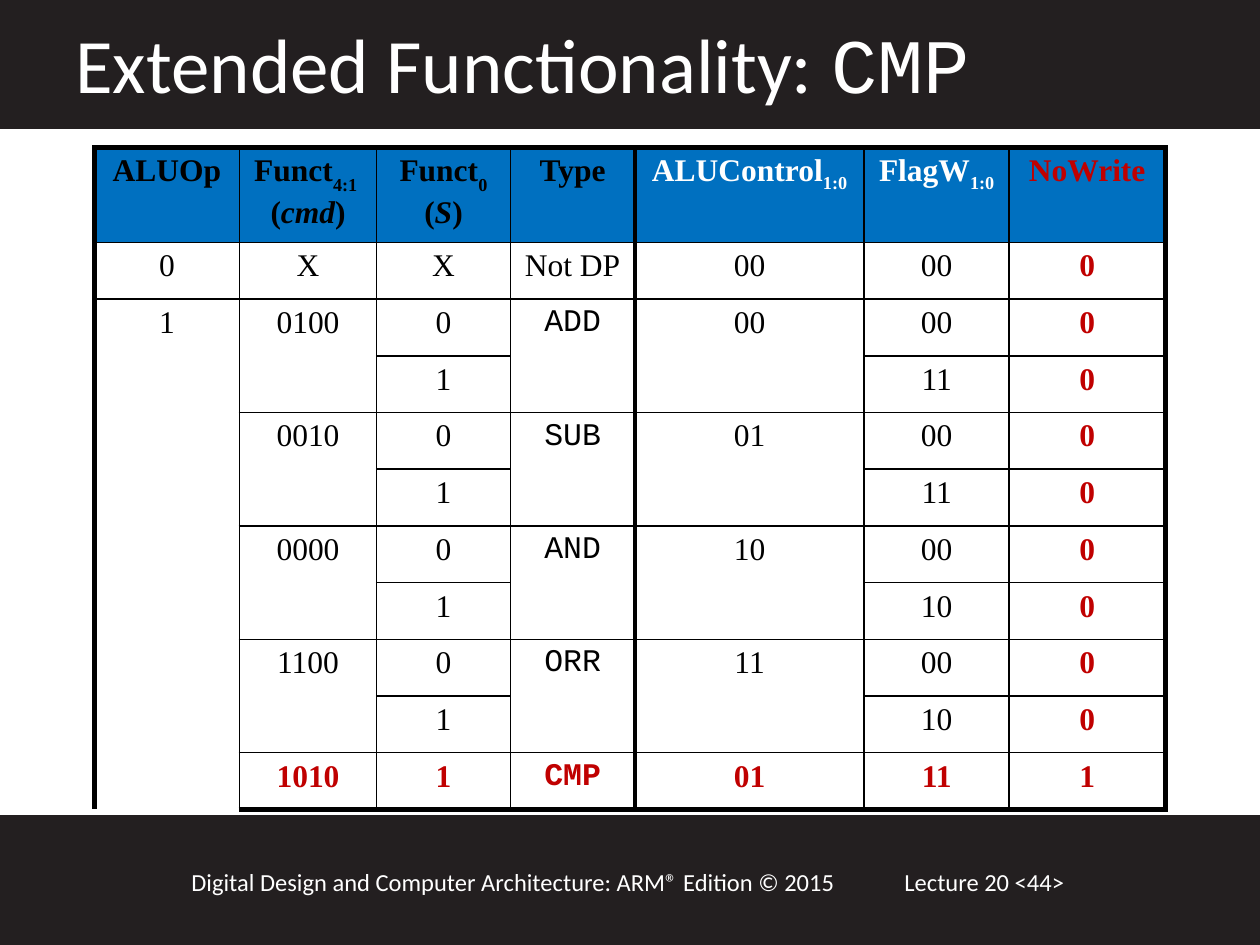
import pptx
import pptx.dml.color
import pptx.enum.shapes
import pptx.enum.text
import pptx.oxml
import pptx.oxml.ns
import pptx.util

SLIDE_WIDTH = pptx.util.Inches(10)
SLIDE_HEIGHT = pptx.util.Inches(7.5)

THEME = {
    "band": "231F20", "header": "0070C0", "light": "FFFFFF",
    "ink": "000000", "accent": "C00000",
    "sans": "Calibri", "serif": "Times New Roman", "mono": "Courier New",
    "title": 44, "footer": 14, "cell": 18,
    "thin": 1, "thick": 3,
}
PLAIN_TABLE_STYLE = "{2D5ABB26-0587-4C30-8999-92F81FD0307C}"

# Column widths and row heights in percent of the slide
COLUMN_SHARES = [11.5, 10.9, 10.6, 9.9, 18.2, 11.5, 12.4]
HEADER_SHARE, ROW_SHARE = 10, 6
TYPE_COLUMN, NO_WRITE_COLUMN = 3, 6

SUB = {"baseline": -30}
HIGH_SUB = {"baseline": -25}
ITALIC = {"italic": True}
# Each heading: colour, then paragraphs of (text, format) runs
HEADINGS = [
    ("ink", [[("ALUOp", {})]]),
    ("ink", [[("Funct", {}), ("4:1 ", SUB)], [("(", {}), ("cmd", ITALIC), (")", {})]]),
    ("ink", [[("Funct", {}), ("0", SUB)], [("(", {}), ("S", ITALIC), (")", {})]]),
    ("ink", [[("Type", {})]]),
    ("light", [[("ALUControl", {}), ("1:0", HIGH_SUB)]]),
    ("light", [[("FlagW", {}), ("1:0", HIGH_SUB)]]),
    ("accent", [[("NoWrite", {})]]),
]
# None continues the cell above
DECODER_ROWS = [
    ["0", "X", "X", "Not DP", "00", "00", "0"],
    ["1", "0100", "0", "ADD", "00", "00", "0"],
    [None, None, "1", None, None, "11", "0"],
    [None, "0010", "0", "SUB", "01", "00", "0"],
    [None, None, "1", None, None, "11", "0"],
    [None, "0000", "0", "AND", "10", "00", "0"],
    [None, None, "1", None, None, "10", "0"],
    [None, "1100", "0", "ORR", "11", "00", "0"],
    [None, None, "1", None, None, "10", "0"],
    [None, "1010", "1", "CMP", "01", "11", "1"],
]


def across(percent):
    return round(SLIDE_WIDTH * percent / 100)


def down(percent):
    return round(SLIDE_HEIGHT * percent / 100)


def place(left, top, width, height):
    return across(left), down(top), across(width), down(height)


def rgb(role):
    return pptx.dml.color.RGBColor.from_string(THEME[role])


def add_run(paragraph, text, size, face, color, baseline=None, **formats):
    run = paragraph.add_run()
    run.text = text
    formats.update(size=pptx.util.Pt(THEME[size]), name=THEME[face])
    for attribute, value in formats.items():
        setattr(run.font, attribute, value)
    run.font.color.rgb = rgb(color)
    if baseline is not None:
        run.font._element.set("baseline", str(baseline * 1000))


def add_band(slide, top, height):
    band = slide.shapes.add_shape(
        pptx.enum.shapes.MSO_SHAPE.RECTANGLE, *place(0, top, 100, height))
    band.shadow.inherit = False
    band.fill.solid()
    band.fill.fore_color.rgb = rgb("band")
    band.line.color.rgb = rgb("band")
    band.line.width = pptx.util.Pt(2)


def add_label(slide, box, size, runs):
    """Add one line of light text from (text, face) runs."""
    frame = slide.shapes.add_textbox(*place(*box)).text_frame
    frame.word_wrap = True
    for text, face in runs:
        add_run(frame.paragraphs[0], text, size, face, "light")


def fill_cell(cell, paragraphs, face, color, bold):
    frame = cell.text_frame
    for index, runs in enumerate(paragraphs):
        paragraph = frame.add_paragraph() if index else frame.paragraphs[0]
        paragraph.alignment = pptx.enum.text.PP_ALIGN.CENTER
        for text, formats in runs:
            add_run(paragraph, text, "cell", face, color, bold=bold, **formats)


def draw_borders(cell, weights):
    properties = cell._tc.get_or_add_tcPr()
    for side, weight in weights.items():
        properties.append(pptx.oxml.parse_xml(
            f'<a:ln{side} {pptx.oxml.ns.nsdecls("a")} w="{pptx.util.Pt(THEME[weight])}">'
            f'<a:solidFill><a:srgbClr val="{THEME["ink"]}"/></a:solidFill></a:ln{side}>'))


def border_weights(row, column, continues, continued):
    """Thick around the table and between inputs and outputs; open inside merges."""
    def weight(is_thick):
        return "thick" if is_thick else "thin"

    last_row, last_column = len(DECODER_ROWS), len(HEADINGS) - 1
    weights = {"L": weight(column in (0, TYPE_COLUMN + 1)),
               "R": weight(column in (TYPE_COLUMN, last_column))}
    if not continues:
        weights["T"] = weight(row == 0)
    if not continued:
        weights["B"] = weight(row == last_row)
    return weights


def merge_continued_cells(table):
    for column in range(len(HEADINGS)):
        start = 0
        for row, values in enumerate(DECODER_ROWS + [[""] * len(HEADINGS)], 1):
            if values[column] is not None:
                if row - start > 1:
                    table.cell(start, column).merge(table.cell(row - 1, column))
                start = row


def add_decoder_table(slide):
    row_shares = [HEADER_SHARE] + [ROW_SHARE] * len(DECODER_ROWS)
    frame = slide.shapes.add_table(
        len(row_shares), len(COLUMN_SHARES),
        *place(7.5, 15.6, sum(COLUMN_SHARES), sum(row_shares)))
    table = frame.table
    table.horz_banding = table.first_row = False
    table._tbl.tblPr.find(pptx.oxml.ns.qn("a:tableStyleId")).text = PLAIN_TABLE_STYLE
    for column, share in zip(table.columns, COLUMN_SHARES):
        column.width = across(share)
    for row, share in zip(table.rows, row_shares):
        row.height = down(share)

    for column, (color, paragraphs) in enumerate(HEADINGS):
        cell = table.cell(0, column)
        fill_cell(cell, paragraphs, "serif", color, True)
        draw_borders(cell, border_weights(0, column, False, False))
        cell.fill.solid()
        cell.fill.fore_color.rgb = rgb("header")

    last_row = len(DECODER_ROWS)
    for row, values in enumerate(DECODER_ROWS, 1):
        for column, value in enumerate(values):
            cell = table.cell(row, column)
            continued = row < last_row and DECODER_ROWS[row][column] is None
            draw_borders(cell, border_weights(row, column, value is None, continued))
            cell.fill.background()
            if value is None:
                continue
            is_new = row == last_row or column == NO_WRITE_COLUMN
            is_mnemonic = column == TYPE_COLUMN and row > 1
            fill_cell(cell, [[(value, {})]], "mono" if is_mnemonic else "serif",
                      "accent" if is_new else "ink", is_new)
    merge_continued_cells(table)


def main():
    deck = pptx.Presentation()
    deck.slide_width, deck.slide_height = SLIDE_WIDTH, SLIDE_HEIGHT
    slide = deck.slides.add_slide(deck.slide_layouts[6])
    add_band(slide, 86.4, 13.6)
    add_band(slide, 0, 13.47)
    add_label(slide, (70.8, 91.07, 21.7, 4.53), "footer",
              [("Lecture 20 <44>", "sans")])
    add_label(slide, (14.2, 91.07, 57.5, 4.53), "footer",
              [("Digital Design and Computer Architecture: ARM® Edition © 2015", "sans")])
    add_label(slide, (5, 1.07, 86.7, 11.2), "title",
              [("Extended Functionality: ", "sans"), ("CMP", "mono")])
    add_decoder_table(slide)
    deck.save("out.pptx")


if __name__ == "__main__":
    main()
